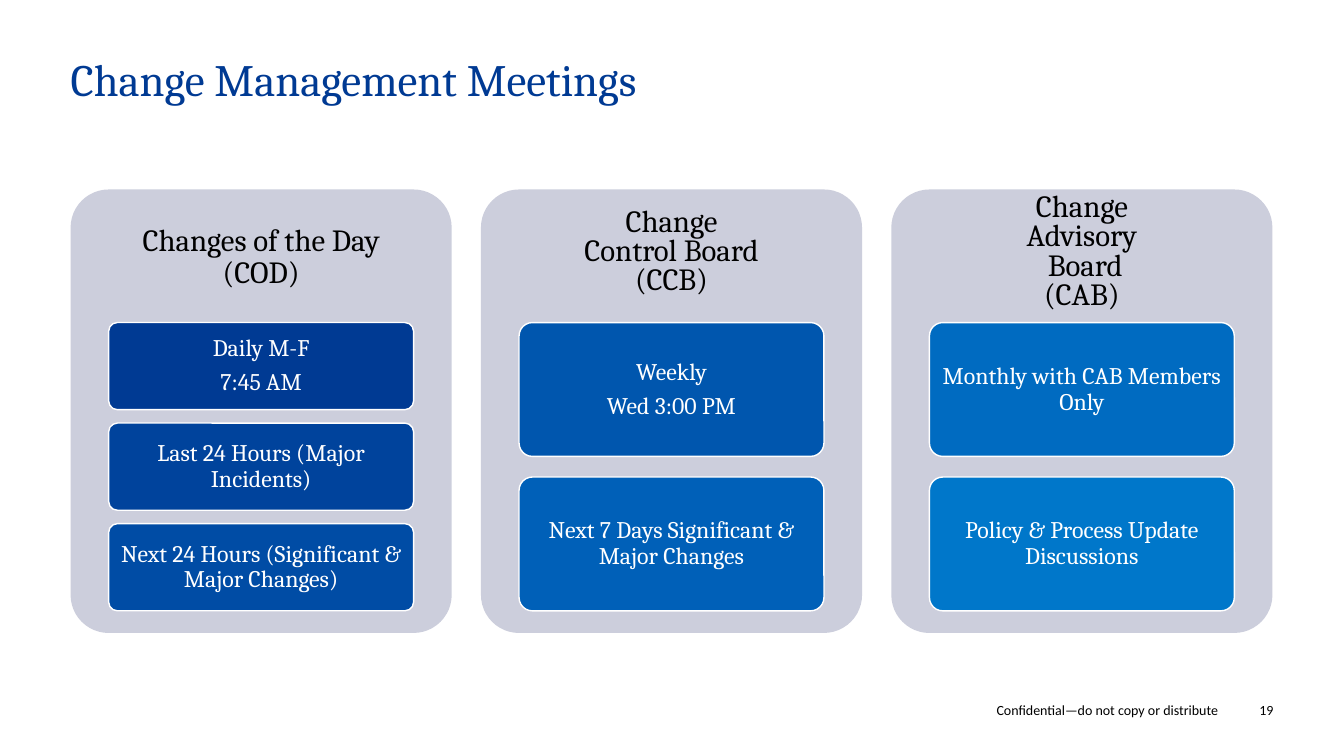
from pptx import Presentation
from pptx.dml.color import RGBColor
from pptx.enum.shapes import MSO_SHAPE
from pptx.enum.text import MSO_ANCHOR, PP_ALIGN
from pptx.util import Inches, Pt

TITLE = "Change Management Meetings"
FOOTER = "Confidential—do not copy or distribute"
PAGE = "19"
BOARDS = [
    {
        "head": [("Changes of the Day", 0.9), ("(COD)", 0.5)],
        "cards": [
            (["Daily M-F", "7:45 AM"], "003A93"),
            (["Last 24 Hours (Major Incidents)"], "00439C"),
            (["Next 24 Hours (Significant & Major Changes)"], "004CA5"),
        ],
    },
    {
        "head": [("Change", 0.5), ("Control Board", 0.5), ("(CCB)", 0.5)],
        "cards": [
            (["Weekly", "Wed 3:00 PM"], "0056AE"),
            (["Next 7 Days Significant & Major Changes"], "0060B8"),
        ],
    },
    {
        "head": [("Change", 0.5), ("Advisory", 0.5), (" Board", 0.5), ("(CAB)", 0.5)],
        "cards": [
            (["Monthly with CAB Members Only"], "006BC1"),
            (["Policy & Process Update Discussions"], "0077CA"),
        ],
    },
]
THEME = {
    "serif": "Cambria", "sans": "Calibri",
    "title": 32, "head": 22, "card": 17, "foot": 10,
    "navy": "003A93", "panel": "CCCEDC", "black": "000000", "white": "FFFFFF",
}
LEFT, TOP, WIDTH, HEIGHT, PITCH = 0.7, 1.88, 3.78, 4.4, 4.07
HEAD, STACK, RATIO = 0.3 * HEIGHT, 0.65 * HEIGHT, 0.154


def write(shape, lines, size, color, font=THEME["serif"], align=PP_ALIGN.CENTER,
          anchor=MSO_ANCHOR.MIDDLE, inset=(0, 0), after=0):
    frame = shape.text_frame
    frame.word_wrap = True
    frame.vertical_anchor = anchor
    frame.margin_left = frame.margin_right = Inches(inset[0])
    frame.margin_top = frame.margin_bottom = Inches(inset[1])
    for i, (text, space) in enumerate(lines):
        para = frame.add_paragraph() if i else frame.paragraphs[0]
        para.alignment = align
        para.line_spacing = space
        para.space_after = Pt(after * size)
        run = para.add_run()
        run.text = text
        run.font.name = font
        run.font.size = Pt(size)
        run.font.color.rgb = RGBColor.from_string(color)


def label(slide, box, lines, size, color, **style):
    shape = slide.shapes.add_textbox(*map(Inches, box))
    write(shape, lines, size, color, **style)


def block(slide, box, fill, line=None):
    shape = slide.shapes.add_shape(MSO_SHAPE.ROUNDED_RECTANGLE, *map(Inches, box))
    shape.adjustments[0] = 0.1
    shape.shadow.inherit = False
    shape.fill.solid()
    shape.fill.fore_color.rgb = RGBColor.from_string(fill)
    if line:
        shape.line.color.rgb = RGBColor.from_string(line)
        shape.line.width = Pt(1)
    else:
        shape.line.fill.background()
    return shape


def board(slide, left, head, cards):
    block(slide, (left, TOP, WIDTH, HEIGHT), THEME["panel"])
    label(slide, (left, TOP, WIDTH, HEAD), head, THEME["head"], THEME["black"],
          inset=(0.09, 0.09), after=0.35)
    count = len(cards)
    tall = STACK / (count + (count - 1) * RATIO)
    for row, (lines, fill) in enumerate(cards):
        top = TOP + HEAD + row * tall * (1 + RATIO)
        card = block(slide, (left + 0.1 * WIDTH, top, 0.8 * WIDTH, tall),
                     fill, THEME["white"])
        write(card, [(text, 0.9) for text in lines], THEME["card"], THEME["white"],
              inset=(0.05, 0.04), after=0.35)


def main():
    deck = Presentation()
    deck.slide_width, deck.slide_height = Inches(13.33), Inches(7.5)
    slide = deck.slides.add_slide(deck.slide_layouts[6])
    label(slide, (LEFT, 0.57, 11.92, 1.05), [(TITLE, 0.9)], THEME["title"],
          THEME["navy"], align=PP_ALIGN.LEFT, anchor=MSO_ANCHOR.TOP)
    for col, item in enumerate(BOARDS):
        board(slide, LEFT + col * PITCH, item["head"], item["cards"])
    for text, left, width in ((FOOTER, 3.65, 8.43), (PAGE, 12.25, 0.38)):
        label(slide, (left, 6.96, width, 0.17), [(text, 1.0)], THEME["foot"],
              THEME["black"], font=THEME["sans"], align=PP_ALIGN.RIGHT,
              anchor=MSO_ANCHOR.TOP)
    deck.save("out.pptx")


if __name__ == "__main__":
    main()
